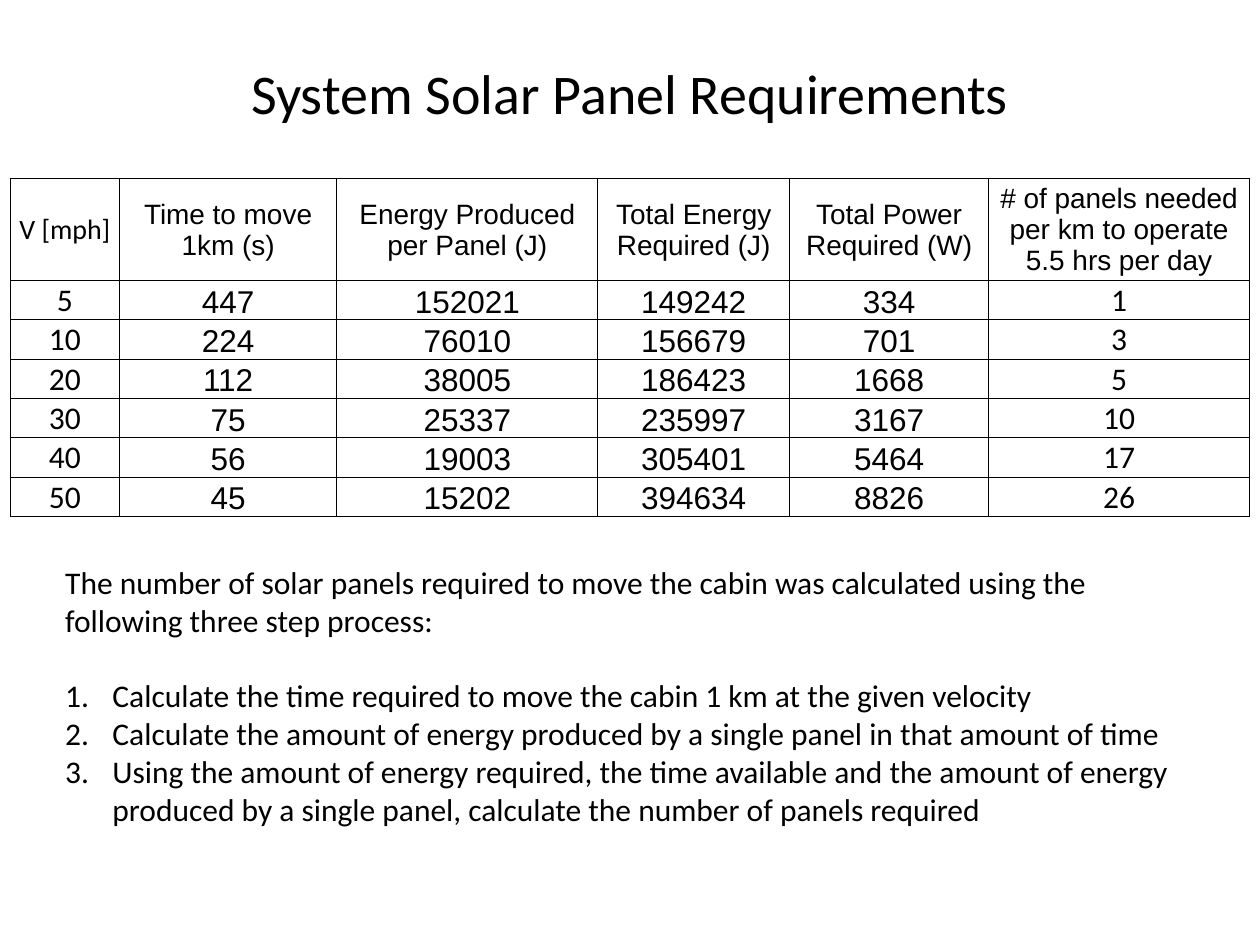
from lxml.etree import SubElement
from pptx import Presentation
from pptx.dml.color import RGBColor
from pptx.enum.text import MSO_ANCHOR, PP_ALIGN
from pptx.oxml.ns import qn
from pptx.util import Pt

BLACK = "000000"


def color(value):
    return RGBColor.from_string(value)


def add_text(paragraph, text, size, font="Calibri"):
    run = paragraph.add_run()
    run.text = text
    run.font.size = Pt(size)
    run.font.name = font
    run.font.color.rgb = color(BLACK)


presentation = Presentation()
presentation.slide_width = Pt(720)
presentation.slide_height = Pt(540)
slide = presentation.slides.add_slide(presentation.slide_layouts[6])

# Title
title = slide.shapes.add_textbox(Pt(36), Pt(21.6), Pt(648), Pt(62.6)).text_frame
title.word_wrap = True
title.vertical_anchor = MSO_ANCHOR.MIDDLE
title.paragraphs[0].alignment = PP_ALIGN.CENTER
add_text(title.paragraphs[0], "System Solar Panel Requirements", 32)

# Requirements table
rows = [
    ["V [mph]", "Time to move 1km (s)", "Energy Produced per Panel (J)",
     "Total Energy Required (J)", "Total Power Required (W)",
     "# of panels needed per km to operate 5.5 hrs per day"],
    ["5", "447", "152021", "149242", "334", "1"],
    ["10", "224", "76010", "156679", "701", "3"],
    ["20", "112", "38005", "186423", "1668", "5"],
    ["30", "75", "25337", "235997", "3167", "10"],
    ["40", "56", "19003", "305401", "5464", "17"],
    ["50", "45", "15202", "394634", "8826", "26"],
]
column_widths = [62.2, 124.3, 149.1, 109.7, 113.7, 149.1]
row_heights = [53.6] + [22.5] * 6
table = slide.shapes.add_table(
    len(rows), len(column_widths), Pt(6), Pt(102),
    Pt(sum(column_widths)), Pt(sum(row_heights))).table
table.first_row = False
table.horz_banding = False
for column, width in zip(table.columns, column_widths):
    column.width = Pt(width)

for row_index, values in enumerate(rows):
    is_header = row_index == 0
    table.rows[row_index].height = Pt(row_heights[row_index])
    for column_index, value in enumerate(values):
        cell = table.cell(row_index, column_index)
        cell.margin_left = cell.margin_right = cell.margin_top = Pt(0.7)
        cell.margin_bottom = Pt(0)
        cell.vertical_anchor = MSO_ANCHOR.MIDDLE if is_header else MSO_ANCHOR.BOTTOM
        paragraph = cell.text_frame.paragraphs[0]
        paragraph.alignment = PP_ALIGN.CENTER
        uses_calibri = column_index == 0 or (column_index == 5 and not is_header)
        add_text(paragraph, value, 16 if is_header else 18,
                 "Calibri" if uses_calibri else "Arial")

        # Borders come before the fill in the cell properties
        properties = cell._tc.get_or_add_tcPr()
        for side in ("a:lnL", "a:lnR", "a:lnT", "a:lnB"):
            line = SubElement(properties, qn(side), w=str(Pt(0.75)))
            line_fill = SubElement(line, qn("a:solidFill"))
            SubElement(line_fill, qn("a:srgbClr"), val=BLACK)
        cell.fill.background()

# Explanation with numbered steps
process = slide.shapes.add_textbox(Pt(30.2), Pt(318.2), Pt(660.2), Pt(160)).text_frame
process.word_wrap = True
add_text(process.paragraphs[0],
         "The number of solar panels required to move the cabin was calculated "
         "using the following three step process:", 18)
steps = [
    "Calculate the time required to move the cabin 1 km at the given velocity",
    "Calculate the amount of energy produced by a single panel in that amount of time",
    "Using the amount of energy required, the time available and the amount of "
    "energy produced by a single panel, calculate the number of panels required",
]
for index, step in enumerate(steps):
    paragraph = process.add_paragraph()
    if index == 0:
        paragraph.space_before = Pt(21.6)
    properties = paragraph._p.get_or_add_pPr()
    properties.set("marL", str(Pt(27)))
    properties.set("indent", str(-Pt(27)))
    SubElement(properties, qn("a:buFont"), typeface="+mj-lt")
    SubElement(properties, qn("a:buAutoNum"), type="arabicPeriod")
    add_text(paragraph, step, 18)

presentation.save("out.pptx")
